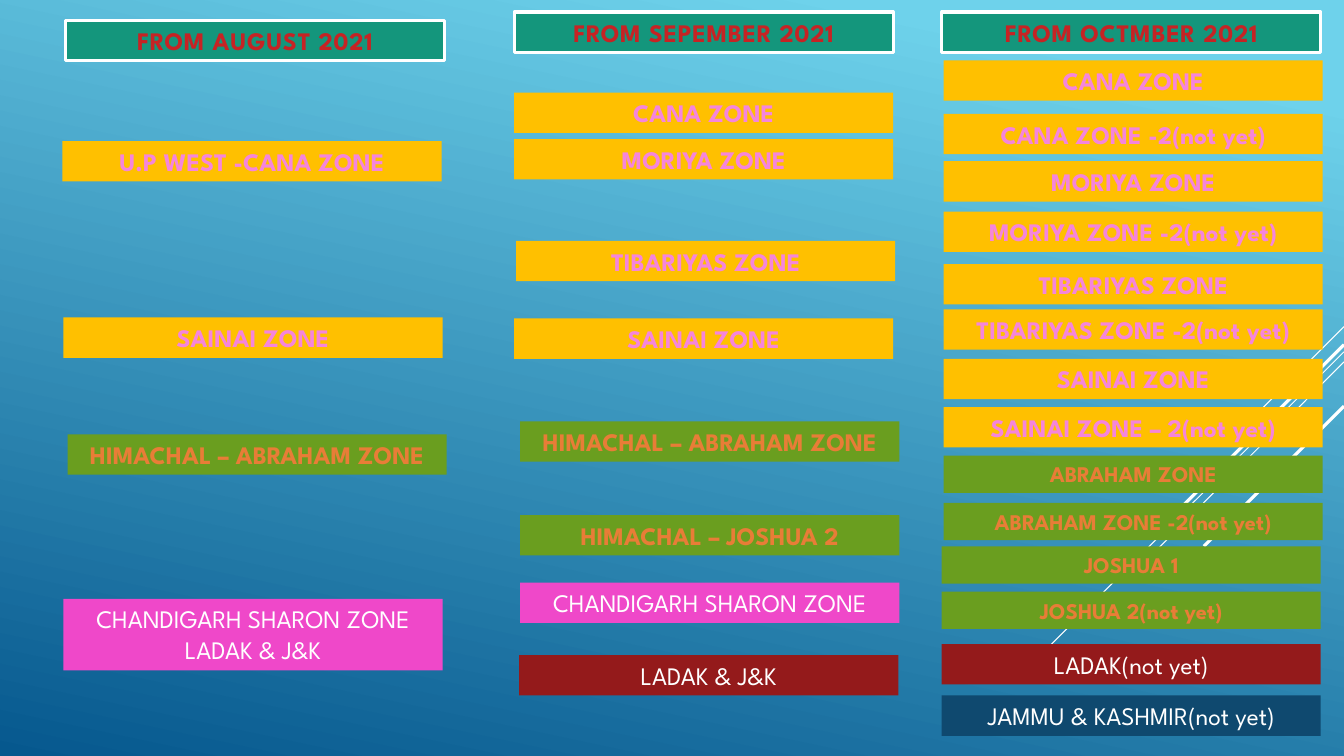
from dataclasses import dataclass
from typing import Optional

from lxml import etree
from pptx import Presentation
from pptx.dml.color import RGBColor as RGB
from pptx.enum.shapes import MSO_CONNECTOR as Conn, MSO_SHAPE as Shape
from pptx.enum.text import MSO_ANCHOR as Anchor, MSO_AUTO_SIZE as Fit, PP_ALIGN as Align
from pptx.oxml import parse_xml
from pptx.oxml.ns import nsdecls, qn
from pptx.util import Inches, Pt


@dataclass(frozen=True)
class Style:
    fill: str
    ink: str = "FFFFFF"
    size: int = 18
    bold: bool = False
    edge: Optional[tuple] = None  # colour and width of the letter outline
    head: bool = False


class Theme:
    font = "League Spartan"
    white = "FFFFFF"
    light, dark = "6ED2EB", "06588E"
    thin, thick = 0.75, 2.25
    wide = 3.76
    tall = {16: 0.37, 18: 0.4}
    head = Style("14967C", "C62324", bold=True, edge=("052F61", 0.75), head=True)
    gold = Style("FFC000", "F585DB", bold=True, edge=("A50E82", 1.75))
    green = Style("6A9E1F", "E87D37", bold=True, edge=("000000", 0.75))
    small = Style("6A9E1F", "E87D37", 16, True, ("000000", 0.75))
    pink = Style("EF48C9")
    red = Style("941A1B")
    navy = Style("0F496F")


# Diagonal rays: start y, end x, end y, width; all start at the right edge
RAYS = [
    (3.24, 12.33, 4.24, Theme.thin),
    (3.49, 10.07, 6.75, Theme.thin),
    (3.59, 11.26, 5.67, Theme.thin),
    (3.42, 11.42, 5.33, Theme.thick),
    (4.03, 11.94, 5.42, Theme.thick),
]

# Bars of each month: left, top, style, text
AUGUST = [
    (0.65, 0.2, Theme.head, "FROM AUGUST 2021"),
    (0.62, 1.4, Theme.gold, "U.P WEST -CANA ZONE"),
    (0.63, 3.15, Theme.gold, "SAINAI ZONE"),
    (0.67, 4.31, Theme.green, "HIMACHAL – ABRAHAM ZONE"),
    (0.63, 5.94, Theme.pink, "CHANDIGARH SHARON ZONE\nLADAK & J&K"),
]
SEPTEMBER = [
    (5.1, 0.12, Theme.head, "FROM SEPEMBER 2021"),
    (5.1, 0.92, Theme.gold, "CANA ZONE"),
    (5.1, 1.38, Theme.gold, "MORIYA ZONE"),
    (5.12, 2.39, Theme.gold, "TIBARIYAS ZONE"),
    (5.1, 3.16, Theme.gold, "SAINAI ZONE"),
    (5.16, 4.18, Theme.green, "HIMACHAL – ABRAHAM ZONE"),
    (5.16, 5.11, Theme.green, "HIMACHAL – JOSHUA 2"),
    (5.16, 5.78, Theme.pink, "CHANDIGARH SHARON ZONE"),
    (5.15, 6.5, Theme.red, "LADAK & J&K"),
]
OCTOBER = [
    (9.34, 0.12, Theme.head, "FROM OCTMBER 2021"),
    (9.36, 0.6, Theme.gold, "CANA ZONE"),
    (9.36, 1.13, Theme.gold, "CANA ZONE -2(not yet)"),
    (9.36, 1.6, Theme.gold, "MORIYA ZONE"),
    (9.36, 2.1, Theme.gold, "MORIYA ZONE -2(not yet)"),
    (9.36, 2.62, Theme.gold, "TIBARIYAS ZONE"),
    (9.36, 3.07, Theme.gold, "TIBARIYAS ZONE -2(not yet)"),
    (9.36, 3.56, Theme.gold, "SAINAI ZONE"),
    (9.36, 4.04, Theme.gold, "SAINAI ZONE – 2(not yet)"),
    (9.36, 4.52, Theme.small, "ABRAHAM ZONE"),
    (9.36, 4.99, Theme.small, "ABRAHAM ZONE -2(not yet)"),
    (9.34, 5.42, Theme.small, "JOSHUA 1"),
    (9.34, 5.87, Theme.small, "JOSHUA 2(not yet)"),
    (9.34, 6.39, Theme.red, "LADAK(not yet)"),
    (9.34, 6.9, Theme.navy, "JAMMU & KASHMIR(not yet)"),
]


def color(code):
    return RGB.from_string(code)


def paint_back(slide):
    fill = slide.background.fill
    fill.gradient()
    fill.gradient_angle = 258
    stops = zip(fill.gradient_stops, (Theme.light, Theme.dark), (0.1, 1))
    for stop, code, place in stops:
        stop.color.rgb = color(code)
        stop.position = place


def add_ray(slide, top, x, y, width):
    ray = slide.shapes.add_connector(
        Conn.STRAIGHT, Inches(13.33), Inches(top), Inches(x), Inches(y))
    ray.line.color.rgb = color(Theme.white)
    ray.line.width = Pt(width)
    etree.SubElement(ray._element.spPr, qn("a:effectLst"))


def outline(props, code, width):
    props.insert(0, parse_xml(
        f'<a:ln {nsdecls("a")} w="{int(Pt(width))}"><a:solidFill>'
        f'<a:srgbClr val="{code}"/></a:solidFill></a:ln>'))


def shade(props):
    props.find(qn("a:solidFill")).addnext(parse_xml(
        f'<a:effectLst {nsdecls("a")}><a:outerShdw blurRad="38100" dist="25400" '
        'dir="5400000"><a:srgbClr val="000000"><a:alpha val="43000"/>'
        '</a:srgbClr></a:outerShdw></a:effectLst>'))


def style_run(run, style):
    font = run.font
    font.name = Theme.font
    font.size = Pt(style.size)
    font.bold = style.bold
    font.color.rgb = color(style.ink)
    props = run._r.get_or_add_rPr()
    if style.edge:
        outline(props, *style.edge)
    if style.head:
        props.set("spc", "50")
        shade(props)


def add_bar(slide, left, top, style, text):
    tall = 0.71 if "\n" in text else Theme.tall[style.size]
    bar = slide.shapes.add_shape(
        Shape.RECTANGLE, Inches(left), Inches(top), Inches(Theme.wide), Inches(tall))
    bar.shadow.inherit = False
    bar.fill.solid()
    bar.fill.fore_color.rgb = color(style.fill)
    if style.head:
        bar.line.color.rgb = color(Theme.white)
        bar.line.width = Pt(Theme.thick)
    else:
        bar.line.fill.background()
    frame = bar.text_frame
    frame.text = text
    frame.word_wrap = True
    frame.auto_size = Fit.SHAPE_TO_FIT_TEXT
    frame.vertical_anchor = Anchor.TOP
    for para in frame.paragraphs:
        para.alignment = Align.CENTER
        for run in para.runs:
            style_run(run, style)


def main():
    deck = Presentation()
    deck.slide_width, deck.slide_height = Inches(13.33), Inches(7.5)
    slide = deck.slides.add_slide(deck.slide_layouts[6])

    # Backdrop
    paint_back(slide)
    for ray in RAYS:
        add_ray(slide, *ray)

    # Month columns
    for month in (AUGUST, SEPTEMBER, OCTOBER):
        for bar in month:
            add_bar(slide, *bar)

    deck.save("out.pptx")


if __name__ == "__main__":
    main()
